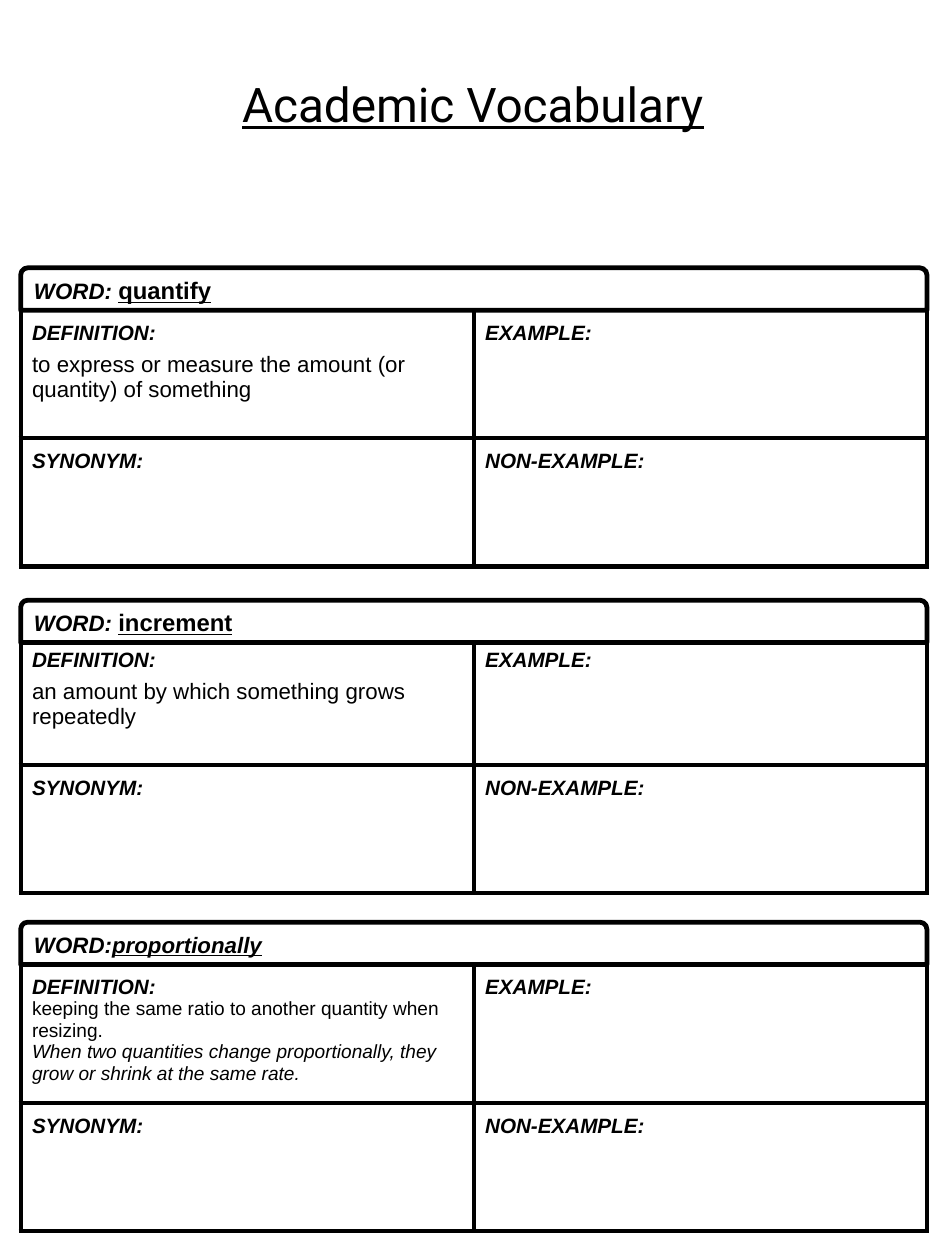
"""Build a vocabulary sheet with three word cards."""
from dataclasses import dataclass

from lxml.etree import SubElement
from pptx import Presentation
from pptx.dml.color import RGBColor
from pptx.enum.shapes import MSO_SHAPE
from pptx.enum.text import MSO_ANCHOR, PP_ALIGN
from pptx.oxml.ns import qn
from pptx.util import Cm, Pt


@dataclass(frozen=True)
class Theme:
    """Hold the colours, fonts and type sizes."""
    ink: str = "000000"
    paper: str = "FFFFFF"
    body: str = "Arial"
    display: str = "Roboto"
    title: int = 30
    word: int = 15
    tag: int = 14
    label: int = 13
    line: int = 3


THEME = Theme()
LEFT, WIDTH = Cm(0.46), Cm(20.1)
HEAD, ROW, PAD = Cm(0.94), Cm(2.84), Cm(0.25)
FIRST, STEP = Cm(6.88), Cm(7.25)
CARDS = [
    {"top": Cm(5.94), "tag": "WORD: ", "word": "quantify",
     "size": THEME.word, "slant": False, "gap": 5,
     "lines": [("to express or measure the amount (or quantity) of something", 14, False)]},
    {"top": Cm(13.31), "tag": "WORD: ", "word": "increment",
     "size": THEME.word, "slant": False, "gap": 5,
     "lines": [("an amount by which something grows repeatedly", 14, False)]},
    {"top": Cm(20.45), "tag": "WORD:", "word": "proportionally",
     "size": THEME.tag, "slant": True, "gap": 0,
     "lines": [("keeping the same ratio to another quantity when resizing.", 12, False),
               ("When two quantities change proportionally, they grow or shrink at the same rate.",
                12, True)]},
]


def style(run, size, bold=False, slant=False, under=False, face=THEME.body):
    """Format one run."""
    font = run.font
    font.name, font.size = face, Pt(size)
    font.bold, font.italic, font.underline = bold, slant, under
    font.color.rgb = RGBColor.from_string(THEME.ink)


def pad(box):
    """Give a cell or text frame equal margins."""
    box.margin_left = box.margin_right = PAD
    box.margin_top = box.margin_bottom = PAD


def edge(cell):
    """Draw all four borders of a cell."""
    props = cell._tc.get_or_add_tcPr()
    for side in ("lnL", "lnR", "lnT", "lnB"):
        line = SubElement(props, qn(f"a:{side}"), w=str(Pt(THEME.line)))
        fill = SubElement(line, qn("a:solidFill"))
        SubElement(fill, qn("a:srgbClr"), val=THEME.ink)


def add_title(slide, text):
    """Add the centred title."""
    box = slide.shapes.add_textbox(Cm(1.65), Cm(1.42), Cm(17.68), Cm(2.21))
    frame = box.text_frame
    frame.word_wrap = True
    pad(frame)
    frame.text = text
    para = frame.paragraphs[0]
    para.alignment = PP_ALIGN.CENTER
    style(para.runs[0], THEME.title, under=True, face=THEME.display)


def add_grid(slide, top, card):
    """Add the four labelled cells of a card."""
    shape = slide.shapes.add_table(2, 2, LEFT, top, WIDTH, ROW * 2)
    table = shape.table
    table.first_row = table.horz_banding = False
    for row in table.rows:
        row.height = ROW
    labels = ("DEFINITION:", "EXAMPLE:", "SYNONYM:", "NON-EXAMPLE:")
    for cell, label in zip(table.iter_cells(), labels):
        pad(cell)
        edge(cell)
        cell.fill.background()
        cell.text_frame.text = label
        style(cell.text_frame.paragraphs[0].runs[0], THEME.label, True, True)
    frame = table.cell(0, 0).text_frame
    for text, size, slant in card["lines"]:
        para = frame.add_paragraph()
        para.text = text
        para.space_before = Pt(card["gap"])
        style(para.runs[0], size, slant=slant)


def add_head(slide, card):
    """Add the rounded bar that names the word."""
    bar = slide.shapes.add_shape(MSO_SHAPE.ROUND_2_SAME_RECTANGLE,
                                 LEFT, card["top"], WIDTH, HEAD)
    bar.shadow.inherit = False
    bar.fill.solid()
    bar.fill.fore_color.rgb = RGBColor.from_string(THEME.paper)
    bar.line.color.rgb = RGBColor.from_string(THEME.ink)
    bar.line.width = Pt(THEME.line)
    frame = bar.text_frame
    frame.word_wrap = True
    frame.vertical_anchor = MSO_ANCHOR.MIDDLE
    pad(frame)
    frame.text = card["tag"]
    para = frame.paragraphs[0]
    para.alignment = PP_ALIGN.LEFT
    style(para.runs[0], THEME.tag, True, True)
    run = para.add_run()
    run.text = card["word"]
    style(run, card["size"], True, card["slant"], True)


def main():
    """Build and save the sheet."""
    deck = Presentation()
    deck.slide_width, deck.slide_height = Cm(20.96), Cm(27.94)
    slide = deck.slides.add_slide(deck.slide_layouts[6])
    add_title(slide, "Academic Vocabulary")
    for index, card in enumerate(CARDS):
        add_grid(slide, FIRST + index * STEP, card)
        add_head(slide, card)
    deck.save("out.pptx")


if __name__ == "__main__":
    main()
